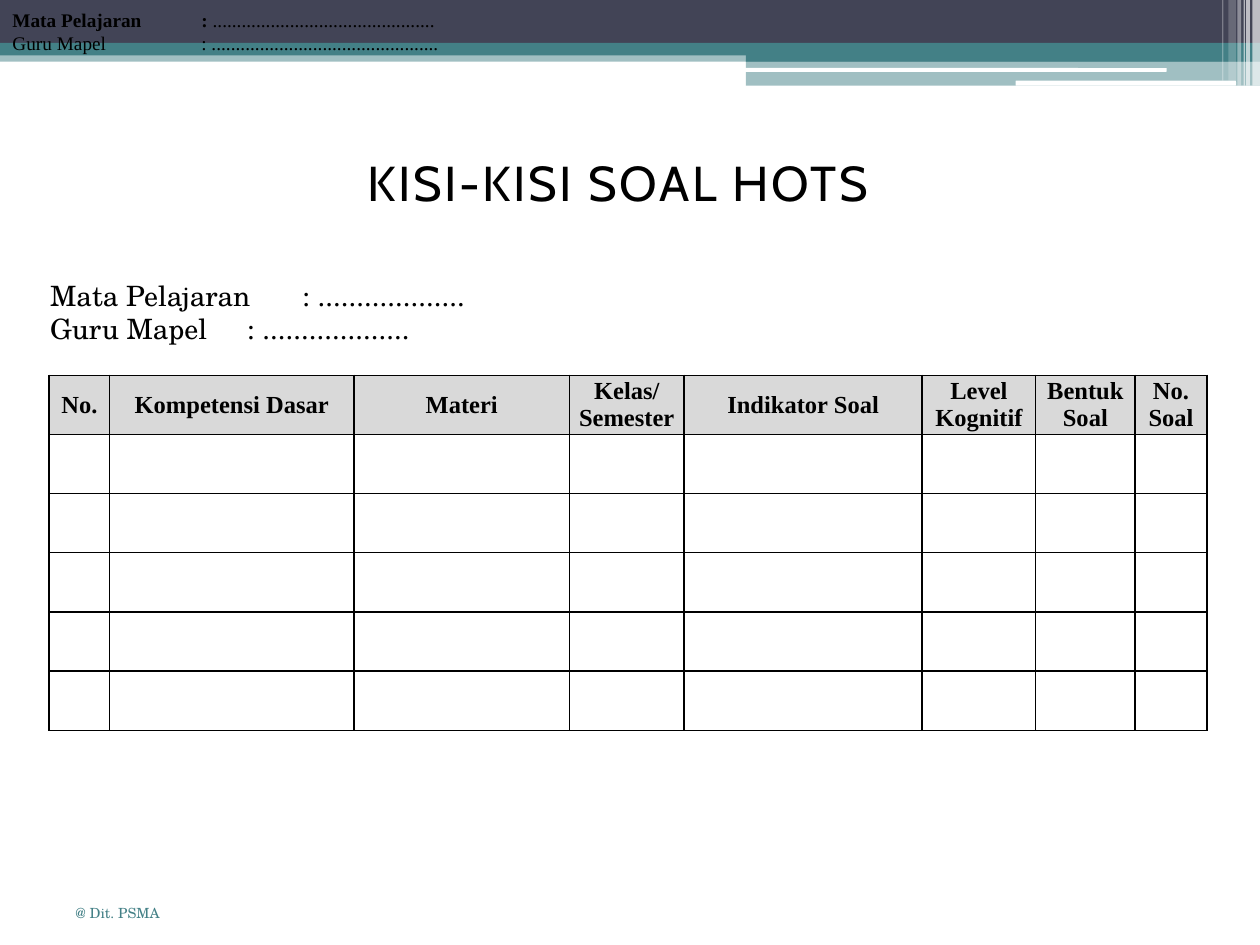
from lxml.etree import SubElement
from pptx import Presentation
from pptx.dml.color import RGBColor
from pptx.enum.shapes import MSO_SHAPE
from pptx.enum.text import MSO_ANCHOR, PP_ALIGN
from pptx.oxml.ns import qn
from pptx.util import Inches, Pt

SLATE, TEAL, WHITE, BLACK, GREY = "424456", "438086", "FFFFFF", "000000", "D9D9D9"
SERIF, SCHOOL, SANS = "Times New Roman", "TeX Gyre Schola", "Cabin"

HEADINGS = ["No.", "Kompetensi Dasar", "Materi", "Kelas/\nSemester",
            "Indikator Soal", "Level Kognitif", "Bentuk Soal", "No. Soal"]
COLUMN_WIDTHS = [0.48, 1.94, 1.71, 0.91, 1.89, 0.9, 0.79, 0.57]
HEADING_HEIGHT, ROW_HEIGHT, EMPTY_ROWS = 0.46, 0.47, 5


def rgb(color):
    return RGBColor.from_string(color)


def style_span(span, font, size, color=BLACK, bold=False):
    values = {"name": font, "size": Pt(size), "bold": bold}
    for name, value in values.items():
        setattr(span.font, name, value)
    span.font.color.rgb = rgb(color)


def add_bar(page, box, color, opacity=100, rounded=False):
    kind = MSO_SHAPE.ROUNDED_RECTANGLE if rounded else MSO_SHAPE.RECTANGLE
    bar = page.shapes.add_shape(kind, *map(Inches, box))
    bar.shadow.inherit = False
    bar.line.fill.background()
    bar.fill.solid()
    bar.fill.fore_color.rgb = rgb(color)
    if opacity < 100:
        fill_color = bar.fill._xPr.find(qn("a:solidFill"))[0]
        SubElement(fill_color, qn("a:alpha"), val=str(opacity * 1000))


def add_banner(page, left, top, width):
    def bar(x, y, w, h, *look):
        add_bar(page, (left + x, top + y, w, h), *look)

    bar(0, 0.4, width, 0.09, TEAL, 50)
    bar(0, 0, width, 0.34, SLATE)
    bar(0, 0.34, width, 0.1, TEAL)
    bar(5.92, 0.39, width - 5.92, 0.1, TEAL)
    bar(5.92, 0.48, width - 5.92, 0.2, TEAL, 50)
    bar(5.91, 0.54, 3.35, 0.03, WHITE, 100, True)
    bar(8.06, 0.64, 1.75, 0.04, WHITE, 100, True)
    stripes = [(9.94, 0.06, 0.68, 65), (9.89, 0.03, 0.68, 65),
               (9.87, 0.01, 0.68, 60), (9.82, 0.03, 0.68, 40),
               (9.75, 0.06, 0.64, 20), (9.7, 0.01, 0.64, 30)]
    for x, stripe_width, height, opacity in stripes:
        bar(x, 0, stripe_width, height, WHITE, opacity)


def add_text(page, box, lines, font, size, color=BLACK,
             align=PP_ALIGN.LEFT, anchor=MSO_ANCHOR.TOP, spacing=0):
    """Each line is a list of (text, bold) spans; spacing is in points."""
    frame = page.shapes.add_textbox(*map(Inches, box)).text_frame
    frame.word_wrap = True
    frame.vertical_anchor = anchor
    for index, spans in enumerate(lines):
        para = frame.paragraphs[0] if index == 0 else frame.add_paragraph()
        para.alignment = align
        for text, bold in spans:
            span = para.add_run()
            span.text = text
            style_span(span, font, size, color, bold)
            if spacing:
                span.font._element.set("spc", str(int(spacing * 100)))


def add_borders(cell):
    properties = cell._tc.get_or_add_tcPr()
    for position, side in enumerate(("lnL", "lnR", "lnT", "lnB")):
        line = properties.makeelement(qn(f"a:{side}"), {"w": str(Pt(1))})
        fill = SubElement(line, qn("a:solidFill"))
        SubElement(fill, qn("a:srgbClr"), val=BLACK)
        properties.insert(position, line)


def style_heading(cell, text):
    cell.text = text
    cell.fill.solid()
    cell.fill.fore_color.rgb = rgb(GREY)
    margin = Inches(0.05)
    values = {"vertical_anchor": MSO_ANCHOR.MIDDLE, "margin_left": margin,
              "margin_right": margin, "margin_top": 0, "margin_bottom": 0}
    for name, value in values.items():
        setattr(cell, name, value)
    for para in cell.text_frame.paragraphs:
        para.alignment = PP_ALIGN.CENTER
        for span in para.runs:
            style_span(span, SERIF, 14, bold=True)


def add_question_grid(page, left, top):
    heights = [HEADING_HEIGHT] + [ROW_HEIGHT] * EMPTY_ROWS
    box = (left, top, sum(COLUMN_WIDTHS), sum(heights))
    table = page.shapes.add_table(len(heights), len(HEADINGS), *map(Inches, box)).table
    table.first_row = table.horz_banding = False
    for column, width in zip(table.columns, COLUMN_WIDTHS):
        column.width = Inches(width)
    for row, height in zip(table.rows, heights):
        row.height = Inches(height)
    for cell in table.iter_cells():
        cell.fill.background()
        add_borders(cell)
    for cell, text in zip(table.rows[0].cells, HEADINGS):
        style_heading(cell, text)


def main():
    deck = Presentation()
    deck.slide_width, deck.slide_height = Inches(10), Inches(7.5)
    page = deck.slides.add_slide(deck.slide_layouts[6])

    add_banner(page, 0, 0, 10)
    add_text(page, (0.03, 1.16, 9.75, 0.57), [[("KISI-KISI SOAL HOTS", False)]],
             SANS, 28, align=PP_ALIGN.CENTER, spacing=1.5)
    add_text(page, (0.5, 7.13, 1.51, 0.4), [[("@ Dit. PSMA", False)]],
             SCHOOL, 8, TEAL)
    add_question_grid(page, 0.39, 2.98)
    add_text(page, (0, 0, 10, 0.5),
             [[("Mata Pelajaran\t:", True),
               (" ..............................................", False)],
              [("Guru Mapel\t\t: ...............................................", False)]],
             SERIF, 11, anchor=MSO_ANCHOR.MIDDLE)
    add_text(page, (0.3, 2.16, 6.13, 0.64),
             [[("Mata Pelajaran\t: ...................", False)],
              [("Guru Mapel\t : ...................", False)]],
             SCHOOL, 16)
    deck.save("out.pptx")


if __name__ == "__main__":
    main()
